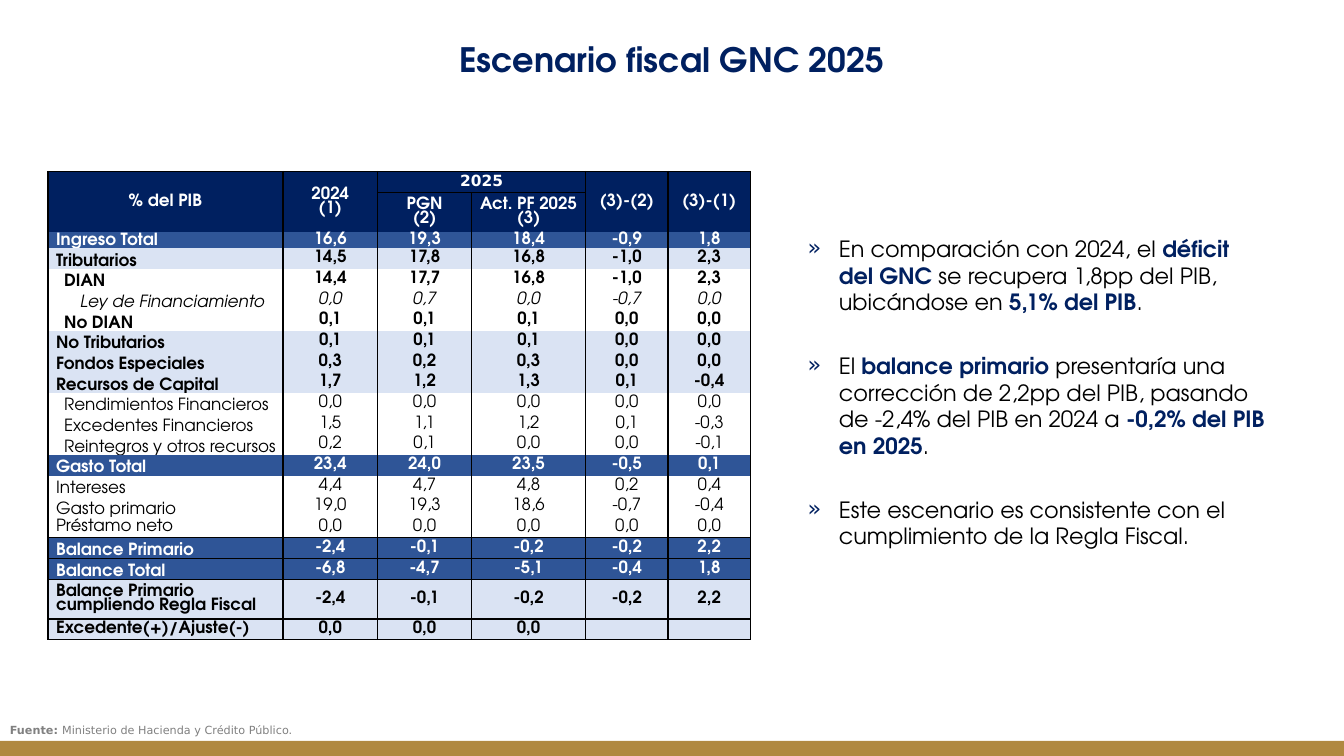
from dataclasses import dataclass

from lxml.etree import SubElement
from pptx import Presentation
from pptx.dml.color import RGBColor as RGB
from pptx.enum.shapes import MSO_SHAPE as SHAPE
from pptx.enum.text import MSO_ANCHOR as ANCHOR, MSO_AUTO_SIZE as AUTO, PP_ALIGN as ALIGN
from pptx.oxml.ns import qn
from pptx.util import Inches, Pt


@dataclass(frozen=True)
class Theme:
    """Colours, fonts and type sizes of the slide."""
    navy: str = "002060"
    blue: str = "2F5597"
    pale: str = "DAE3F3"
    white: str = "FFFFFF"
    black: str = "000000"
    gold: str = "B08840"
    grey: str = "808080"
    font: str = "TeX Gyre Adventor"
    plain_font: str = "DejaVu Sans"
    title: int = 24
    body: int = 16
    table: int = 12
    year: int = 11
    source: int = 8


TH = Theme()
ROW_STYLES = {
    "total": (TH.blue, TH.white, True, False),
    "group": (TH.pale, TH.black, True, False),
    "bold": (TH.white, TH.black, True, False),
    "italic": (TH.white, TH.black, False, True),
    "plain": (TH.white, TH.black, False, False),
}
ROWS = [
    ("total", 1, "Ingreso Total", "16,6 19,3 18,4 -0,9 1,8"),
    ("group", 1, "Tributarios", "14,5 17,8 16,8 -1,0 2,3"),
    ("bold", 2, "DIAN", "14,4 17,7 16,8 -1,0 2,3"),
    ("italic", 4, "Ley de Financiamiento", "0,0 0,7 0,0 -0,7 0,0"),
    ("bold", 2, "No DIAN", "0,1 0,1 0,1 0,0 0,0"),
    ("group", 1, "No Tributarios", "0,1 0,1 0,1 0,0 0,0"),
    ("group", 1, "Fondos Especiales", "0,3 0,2 0,3 0,0 0,0"),
    ("group", 1, "Recursos de Capital", "1,7 1,2 1,3 0,1 -0,4"),
    ("plain", 2, "Rendimientos Financieros", "0,0 0,0 0,0 0,0 0,0"),
    ("plain", 2, "Excedentes Financieros", "1,5 1,1 1,2 0,1 -0,3"),
    ("plain", 2, "Reintegros y otros recursos", "0,2 0,1 0,0 0,0 -0,1"),
    ("total", 1, "Gasto Total", "23,4 24,0 23,5 -0,5 0,1"),
    ("plain", 1, "Intereses", "4,4 4,7 4,8 0,2 0,4"),
    ("plain", 1, "Gasto primario", "19,0 19,3 18,6 -0,7 -0,4"),
    ("plain", 1, "Préstamo neto", "0,0 0,0 0,0 0,0 0,0"),
    ("total", 1, "Balance Primario", "-2,4 -0,1 -0,2 -0,2 2,2"),
    ("total", 1, "Balance Total", "-6,8 -4,7 -5,1 -0,4 1,8"),
    ("group", 1, "Balance Primario cumpliendo Regla Fiscal", "-2,4 -0,1 -0,2 -0,2 2,2"),
    ("group", 1, "Excedente(+)/Ajuste(-)", "0,0 0,0 0,0"),
]
HEADERS = [
    (0, 0, 1, 0, "% del PIB"), (0, 1, 1, 1, "2024\n(1)"), (0, 2, 0, 3, "2025"),
    (0, 4, 1, 4, "(3)-(2)"), (0, 5, 1, 5, "(3)-(1)"),
    (1, 2, 1, 2, "PGN\n(2)"), (1, 3, 1, 3, "Act. PF 2025\n(3)"),
]
COL_WIDTHS = [17.48, 7.05, 6.98, 8.5, 6.12, 6.15]
ROW_HEIGHTS = [2.78, 5.3, 2.1] + [2.74] * 16 + [5.28, 2.74]
RULED_EDGES = {0, 17, 18, 19, 20, 21}
MIDDLE_LABELS = {16, 19, 20}
POINTS = [
    "En comparación con 2024, el **déficit del GNC** se recupera 1,8pp del PIB, "
    "ubicándose en **5,1% del PIB**.",
    "El **balance primario** presentaría una corrección de 2,2pp del PIB, pasando "
    "de -2,4% del PIB en 2024 a **-0,2% del PIB en 2025**.",
    "Este escenario es consistente con el cumplimiento de la Regla Fiscal.",
]


def write(p, text, size, color=TH.black, accent=None, font=TH.font, bold=False,
          italic=False, align=ALIGN.LEFT, spacing=1.0, before=0):
    """Fill a paragraph; parts between double asterisks are bold in the accent colour."""
    p.alignment, p.line_spacing = align, spacing
    p.space_before, p.space_after = Pt(before), Pt(0)
    if not text:
        SubElement(p._p, qn("a:endParaRPr"), sz=str(size * 100))
        return
    for i, part in enumerate(text.split("**")):
        r = p.add_run()
        r.text = part
        f = r.font
        f.name, f.size, f.italic = font, Pt(size), italic
        f.bold = bold or i % 2 == 1
        f.color.rgb = RGB.from_string(accent if i % 2 and accent else color)


class Deck:
    """Holds the theme and current slide; lengths are percentages of the slide."""

    def __init__(self, theme):
        """Start a wide presentation with one title and content slide."""
        self.th, self.prs = theme, Presentation()
        self.prs.slide_width, self.prs.slide_height = Inches(13.33), Inches(7.5)
        self.s = self.prs.slides.add_slide(self.prs.slide_layouts[1])

    def x(self, share):
        """Turn a share of the width into a length."""
        return int(self.prs.slide_width * share / 100)

    def y(self, share):
        """Turn a share of the height into a length."""
        return int(self.prs.slide_height * share / 100)

    def box(self, left, top, width, height):
        """Turn four shares into a position and a size."""
        return self.x(left), self.y(top), self.x(width), self.y(height)

    def frame(self, sp, box, anchor):
        """Place a text shape and return its wrapped text frame."""
        sp.left, sp.top, sp.width, sp.height = self.box(*box)
        tf = sp.text_frame
        tf.word_wrap, tf.auto_size, tf.vertical_anchor = True, AUTO.NONE, anchor
        return tf

    def bar(self, box, color):
        """Draw a plain filled band."""
        sp = self.s.shapes.add_shape(SHAPE.RECTANGLE, *self.box(*box))
        sp.shadow.inherit = False
        sp.fill.solid()
        sp.fill.fore_color.rgb = RGB.from_string(color)
        sp.line.fill.background()

    def title(self, text, box):
        """Fill the title placeholder."""
        tf = self.frame(self.s.shapes.title, box, ANCHOR.MIDDLE)
        write(tf.paragraphs[0], text, self.th.title, self.th.navy, bold=True,
              align=ALIGN.CENTER)

    def bullets(self, items, box):
        """Fill the body placeholder with a bulleted list."""
        tf = self.frame(self.s.placeholders[1], box, ANCHOR.TOP)
        for i, item in enumerate(items):
            p = tf.add_paragraph() if i else tf.paragraphs[0]
            write(p, item, self.th.body, accent=self.th.navy, before=26 if i else 0)
            pPr = p._p.get_or_add_pPr()
            pPr.set("marL", str(Inches(0.31)))
            pPr.set("indent", str(-Inches(0.31)))
            clr = SubElement(pPr, qn("a:buClr"))
            SubElement(clr, qn("a:srgbClr"), val=self.th.navy)
            SubElement(pPr, qn("a:buFont"), typeface=self.th.plain_font)
            SubElement(pPr, qn("a:buChar"), char="»")

    def source(self, text, box):
        """Add the source line."""
        sp = self.s.shapes.add_textbox(*self.box(*box))
        tf = self.frame(sp, box, ANCHOR.MIDDLE)
        write(tf.paragraphs[0], text, self.th.source, self.th.grey,
              font=self.th.plain_font, spacing=0.9)

    def borders(self, cell, row, col):
        """Rule both sides of a cell, and its top and bottom where the table has a line."""
        edges = RULED_EDGES | ({1} if col in (2, 3) else set())
        sides = {"lnL": True, "lnR": True, "lnT": row in edges, "lnB": row + 1 in edges}
        tcPr = cell._tc.get_or_add_tcPr()
        for tag, ruled in sides.items():
            ln = SubElement(tcPr, qn(f"a:{tag}"), w=str(Pt(1)))
            fill = SubElement(ln, qn("a:solidFill" if ruled else "a:noFill"))
            if ruled:
                SubElement(fill, qn("a:srgbClr"), val=self.th.black)

    def cell(self, cell, text, fill, anchor=ANCHOR.MIDDLE, left=0, **fmt):
        """Fill a table cell with one paragraph per line of text."""
        cell.fill.solid()
        cell.fill.fore_color.rgb = RGB.from_string(fill)
        cell.margin_left, cell.margin_right = Inches(left), 0
        cell.margin_top = cell.margin_bottom = 0
        cell.vertical_anchor = anchor
        fmt = {"size": self.th.table, "align": ALIGN.CENTER, "spacing": 0.9} | fmt
        for i, line in enumerate(text.split("\n")):
            p = cell.text_frame.add_paragraph() if i else cell.text_frame.paragraphs[0]
            write(p, line, **fmt)

    def table(self, left, top):
        """Build the fiscal table."""
        box = self.box(left, top, sum(COL_WIDTHS), sum(ROW_HEIGHTS))
        tbl = self.s.shapes.add_table(len(ROW_HEIGHTS), len(COL_WIDTHS), *box).table
        tbl.first_row = tbl.horz_banding = False
        for column, width in zip(tbl.columns, COL_WIDTHS):
            column.width = self.x(width)
        for i, height in enumerate(ROW_HEIGHTS):
            tbl.rows[i].height = self.y(height)
            for j in range(len(COL_WIDTHS)):
                self.borders(tbl.cell(i, j), i, j)
        for row, col, last_row, last_col, text in HEADERS:
            if (row, col) != (last_row, last_col):
                tbl.cell(row, col).merge(tbl.cell(last_row, last_col))
            year = {"size": self.th.year, "font": self.th.plain_font} if text == "2025" else {}
            self.cell(tbl.cell(row, col), text, self.th.navy, color=self.th.white,
                      bold=True, **year)
        for i, (kind, level, label, values) in enumerate(ROWS, 2):
            fill, color, bold, italic = ROW_STYLES[kind]
            fmt = {"color": color, "bold": bold, "italic": italic}
            anchor = ANCHOR.MIDDLE if i in MIDDLE_LABELS else ANCHOR.BOTTOM
            self.cell(tbl.cell(i, 0), label, fill, anchor, 0.08 * level,
                      align=ALIGN.LEFT, **fmt)
            numbers = values.split()
            for j in range(1, len(COL_WIDTHS)):
                text = numbers[j - 1] if j <= len(numbers) else ""
                self.cell(tbl.cell(i, j), text, fill, **fmt)


def main():
    """Build and save the slide."""
    deck = Deck(TH)
    deck.bar((0, 98, 100, 2), TH.gold)
    deck.table(3.57, 22.67)
    deck.title("Escenario fiscal GNC 2025", (4.88, 4.53, 90.17, 6.67))
    deck.bullets(POINTS, (59.34, 30.4, 35.86, 43.87))
    deck.source("**Fuente: **Ministerio de Hacienda y Crédito Público.", (0, 94, 40.96, 5.33))
    deck.prs.save("out.pptx")


if __name__ == "__main__":
    main()
